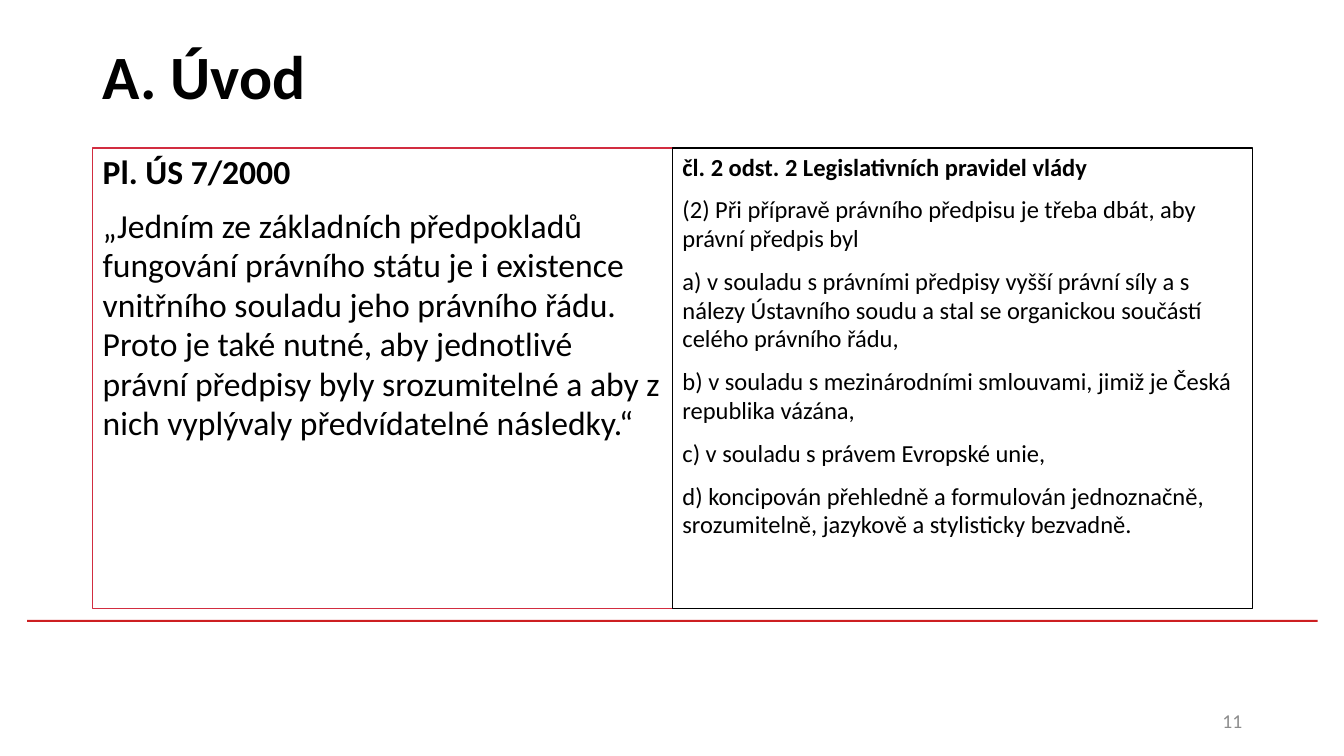
"""Builds the introduction slide with two quoted legal sources side by side."""
from pptx import Presentation
from pptx import util as u
from pptx.dml import color
from pptx.enum import shapes, text

COLORS = {"ink": "000000", "paper": "FFFFFF", "frame": "D22D40",
          "rule": "CD1F21", "muted": "8C8C8C"}
COLUMNS = [0.27, 0.92, 6.67, 9.42, 12.42, 13.07]
ROWS = [0.02, 1.47, 6.04, 6.15, 6.17, 6.95, 7.35]

RULING = [
    "Pl. ÚS 7/2000",
    "„Jedním ze základních předpokladů fungování právního státu je i existence "
    "vnitřního souladu jeho právního řádu. Proto je také nutné, aby jednotlivé "
    "právní předpisy byly srozumitelné a aby z nich vyplývaly předvídatelné následky.“",
]
RULES = [
    "čl. 2 odst. 2 Legislativních pravidel vlády",
    "(2) Při přípravě právního předpisu je třeba dbát, aby právní předpis byl",
    "a) v souladu s právními předpisy vyšší právní síly a s nálezy Ústavního soudu "
    "a stal se organickou součástí celého právního řádu,",
    "b) v souladu s mezinárodními smlouvami, jimiž je Česká republika vázána,",
    "c) v souladu s právem Evropské unie,",
    "d) koncipován přehledně a formulován jednoznačně, srozumitelně, "
    "jazykově a stylisticky bezvadně.",
]


def rgb(name):
    """Return the named colour."""
    return color.RGBColor.from_string(COLORS[name])


def write(para, words, size, ink="ink", bold=False, align="LEFT", before=0, spacing=1.0):
    """Write one formatted span into a paragraph."""
    para.alignment = getattr(text.PP_ALIGN, align)
    para.space_before = u.Pt(before)
    para.line_spacing = spacing
    span = para.add_run()
    span.text = words
    span.font.name = "Calibri"
    span.font.size = u.Pt(size)
    span.font.bold = bold
    span.font.color.rgb = rgb(ink)


class Page:
    """Holds the grid style and the current slide."""

    def __init__(self, deck):
        """Add a blank slide to the deck."""
        self.slide = deck.slides.add_slide(deck.slide_layouts[6])

    def area(self, columns, rows):
        """Turn a pair of column edges and row edges into a place and size."""
        left, right = (COLUMNS[edge] for edge in columns)
        top, bottom = (ROWS[edge] for edge in rows)
        return [u.Inches(length) for length in (left, top, right - left, bottom - top)]

    def block(self, columns, rows, fill, line=None):
        """Draw a filled rectangle with an optional outline."""
        box = self.slide.shapes.add_shape(
            shapes.MSO_SHAPE.RECTANGLE, *self.area(columns, rows))
        box.shadow.inherit = False
        box.fill.solid()
        box.fill.fore_color.rgb = rgb(fill)
        if line:
            box.line.color.rgb = rgb(line)
            box.line.width = u.Pt(1)
        else:
            box.line.fill.background()
        return box

    def label(self, columns, rows, words, **style):
        """Place one vertically centred line of text."""
        frame = self.slide.shapes.add_textbox(*self.area(columns, rows)).text_frame
        frame.word_wrap = True
        frame.vertical_anchor = text.MSO_ANCHOR.MIDDLE
        write(frame.paragraphs[0], words, **style)

    def panel(self, columns, paragraphs, size, line):
        """Draw a framed quotation with a bold heading."""
        frame = self.block(columns, (1, 2), "paper", line).text_frame
        frame.word_wrap = True
        frame.vertical_anchor = text.MSO_ANCHOR.TOP
        for index, words in enumerate(paragraphs):
            para = frame.add_paragraph() if index else frame.paragraphs[0]
            write(para, words, size, bold=index == 0,
                  before=10 if index else 0, spacing=0.98)


def main():
    """Build and save the deck."""
    deck = Presentation()
    deck.slide_width, deck.slide_height = u.Inches(13.33), u.Inches(7.5)
    page = Page(deck)
    page.block((0, 5), (3, 4), "rule")
    page.label((1, 4), (0, 1), "A. Úvod", size=44, bold=True)
    page.panel((1, 2), RULING, 24, "frame")
    page.label((3, 4), (5, 6), "11", size=14, ink="muted", align="RIGHT")
    page.panel((2, 4), RULES, 17.5, "ink")
    deck.save("out.pptx")


if __name__ == "__main__":
    main()
